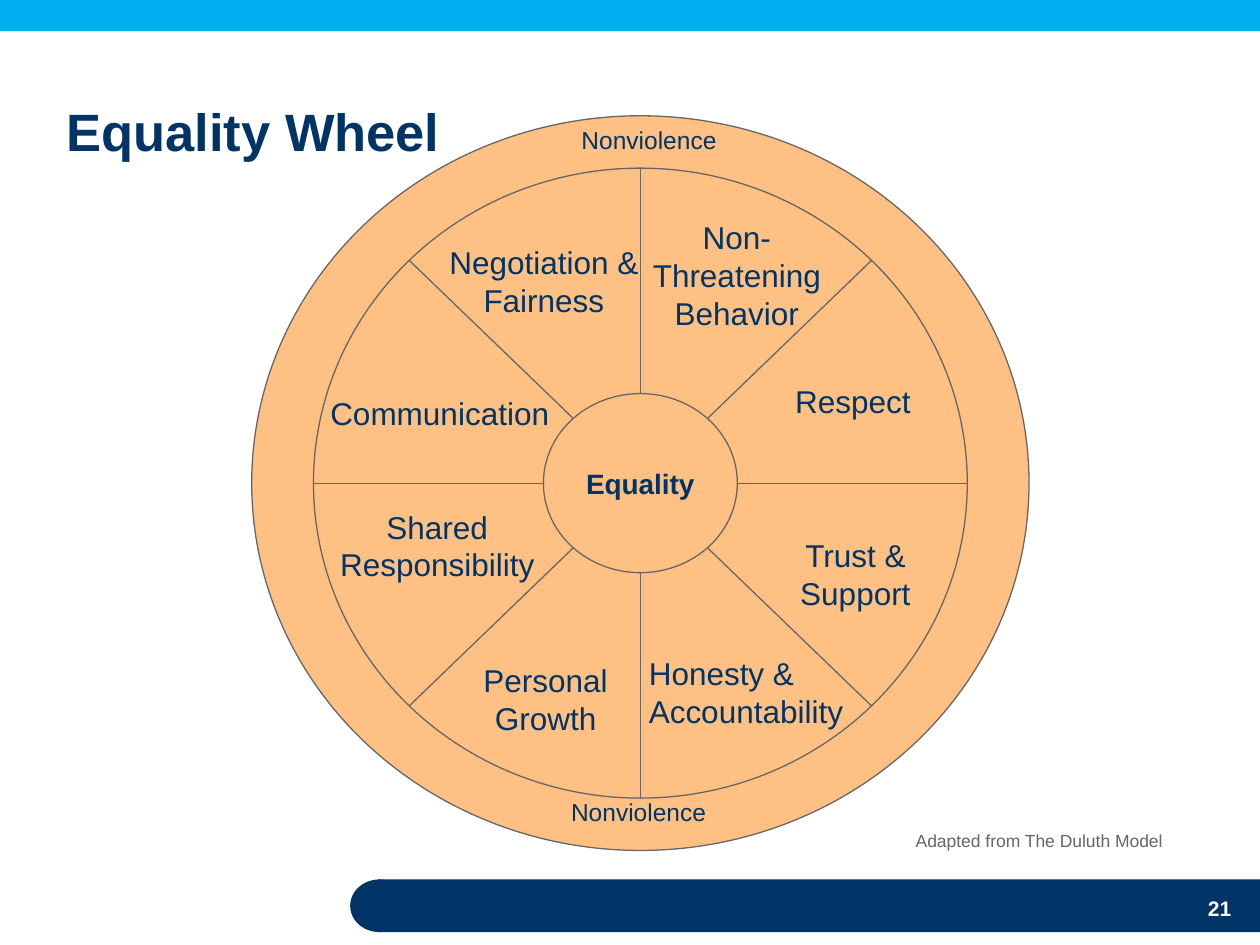
from dataclasses import dataclass
from math import cos, radians, sin

from lxml.etree import SubElement
from pptx import Presentation
from pptx.dml.color import RGBColor
from pptx.enum.shapes import MSO_CONNECTOR, MSO_SHAPE
from pptx.enum.text import MSO_ANCHOR, PP_ALIGN
from pptx.oxml.ns import qn
from pptx.util import Cm, Pt


@dataclass(frozen=True)
class Theme:
    font: str = "Arial"
    navy: RGBColor = RGBColor(0x00, 0x33, 0x66)
    sky: RGBColor = RGBColor(0x00, 0xB0, 0xF0)
    peach: RGBColor = RGBColor(0xFF, 0xC1, 0x83)
    gray: RGBColor = RGBColor(0x66, 0x66, 0x66)
    white: RGBColor = RGBColor(0xFF, 0xFF, 0xFF)
    title_size: int = 30
    segment_size: int = 18
    hub_size: int = 16
    rim_size: int = 14
    number_size: int = 12
    credit_size: int = 10
    line_width: float = 0.75


THEME = Theme()
CENTER_X, CENTER_Y = 12.91, 9.74
RIM_SIZE = (15.67, 14.81)
WHEEL_SIZE = (13.18, 12.7)
HUB_SIZE = (3.91, 3.61)

# Text, left, top, width, height in centimetres, alignment
SEGMENTS = [
    ("Negotiation & Fairness", 8.74, 4.78, 4.45, 1.8, PP_ALIGN.CENTER),
    ("Non-Threatening Behavior", 12.85, 4.27, 4.01, 2.57, PP_ALIGN.CENTER),
    ("Respect", 15.19, 7.57, 4.01, 1.02, PP_ALIGN.CENTER),
    ("Trust & Support", 15.24, 10.69, 4.01, 1.8, PP_ALIGN.CENTER),
    ("Honesty & Accountability", 12.83, 13.06, 4.62, 1.8, PP_ALIGN.LEFT),
    ("Personal Growth", 8.97, 13.21, 4.06, 1.8, PP_ALIGN.CENTER),
    ("Shared Responsibility", 6.53, 10.11, 4.57, 1.8, PP_ALIGN.CENTER),
    ("Communication", 6.02, 7.82, 5.69, 1.02, PP_ALIGN.CENTER),
]
RIM_LABELS = [(10.95, 2.34), (10.74, 15.88)]


def write_text(shape, text, size, color, bold=False,
               alignment=PP_ALIGN.LEFT, anchor=MSO_ANCHOR.TOP):
    text_frame = shape.text_frame
    text_frame.text = text
    text_frame.word_wrap = True
    text_frame.vertical_anchor = anchor
    paragraph = text_frame.paragraphs[0]
    paragraph.alignment = alignment
    font = paragraph.runs[0].font
    font.name = THEME.font
    font.size = Pt(size)
    font.bold = bold
    font.color.rgb = color


def add_label(slide, text, left, top, width, height, size, color, **style):
    box = slide.shapes.add_textbox(Cm(left), Cm(top), Cm(width), Cm(height))
    write_text(box, text, size, color, **style)


def add_filled_shape(slide, kind, left, top, width, height, color):
    shape = slide.shapes.add_shape(kind, Cm(left), Cm(top), Cm(width), Cm(height))
    shape.shadow.inherit = False
    shape.fill.solid()
    shape.fill.fore_color.rgb = color
    shape.line.fill.background()
    return shape


def add_wheel_ellipse(slide, size):
    width, height = size
    ellipse = add_filled_shape(
        slide, MSO_SHAPE.OVAL, CENTER_X - width / 2, CENTER_Y - height / 2,
        width, height, THEME.peach)
    ellipse.line.color.rgb = THEME.gray
    ellipse.line.width = Pt(THEME.line_width)
    return ellipse


def add_diameter(slide, degrees):
    """Draw a line across the inner wheel at the given angle."""
    reach_x = WHEEL_SIZE[0] / 2 * cos(radians(degrees))
    reach_y = WHEEL_SIZE[1] / 2 * sin(radians(degrees))
    connector = slide.shapes.add_connector(
        MSO_CONNECTOR.STRAIGHT,
        Cm(CENTER_X - reach_x), Cm(CENTER_Y - reach_y),
        Cm(CENTER_X + reach_x), Cm(CENTER_Y + reach_y))
    connector.line.color.rgb = THEME.gray
    connector.line.width = Pt(THEME.line_width)
    SubElement(connector._element.spPr, qn("a:effectLst"))


def add_title(slide, text):
    title = slide.shapes.title
    title.left, title.top = Cm(1.09), Cm(0.43)
    title.width, title.height = Cm(21.59), Cm(2.97)
    write_text(title, text, THEME.title_size, THEME.navy, bold=True,
               anchor=MSO_ANCHOR.BOTTOM)


def add_page_frame(slide):
    add_filled_shape(slide, MSO_SHAPE.RECTANGLE, 7.62, 17.73, 17.78, 1.06, THEME.navy)
    add_filled_shape(slide, MSO_SHAPE.OVAL, 7.06, 17.73, 1.17, 1.06, THEME.navy)
    add_filled_shape(slide, MSO_SHAPE.RECTANGLE, 0, 0, 25.4, 0.63, THEME.sky)
    add_label(slide, "21", 22.33, 17.93, 2.74, 0.64, THEME.number_size,
              THEME.white, bold=True, alignment=PP_ALIGN.RIGHT)
    add_label(slide, "Adapted from The Duluth Model", 18.21, 16.61, 6.35, 0.69,
              THEME.credit_size, THEME.gray)


def add_wheel(slide):
    add_wheel_ellipse(slide, RIM_SIZE)
    add_wheel_ellipse(slide, WHEEL_SIZE)
    for degrees in range(0, 180, 45):
        add_diameter(slide, degrees)
    hub = add_wheel_ellipse(slide, HUB_SIZE)
    write_text(hub, "Equality", THEME.hub_size, THEME.navy, bold=True,
               alignment=PP_ALIGN.CENTER, anchor=MSO_ANCHOR.MIDDLE)
    for text, left, top, width, height, alignment in SEGMENTS:
        add_label(slide, text, left, top, width, height, THEME.segment_size,
                  THEME.navy, alignment=alignment)
    for left, top in RIM_LABELS:
        add_label(slide, "Nonviolence", left, top, 4.27, 0.97, THEME.rim_size,
                  THEME.navy, alignment=PP_ALIGN.CENTER, anchor=MSO_ANCHOR.MIDDLE)


def main():
    presentation = Presentation()
    presentation.slide_width = Cm(25.4)
    presentation.slide_height = Cm(19.05)
    slide = presentation.slides.add_slide(presentation.slide_layouts[5])
    add_title(slide, "Equality Wheel")
    add_page_frame(slide)
    add_wheel(slide)
    presentation.save("out.pptx")


if __name__ == "__main__":
    main()
